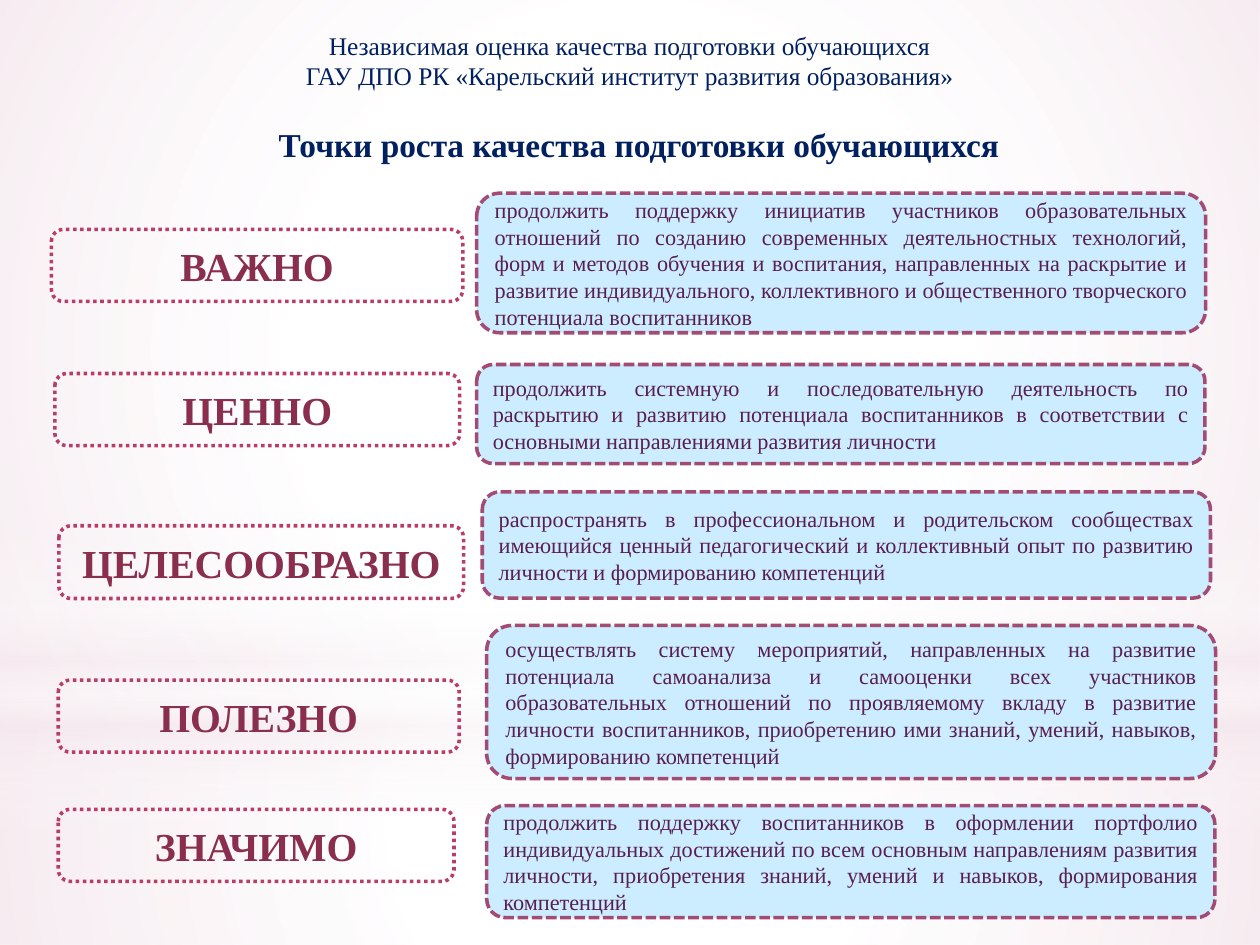
from lxml import etree
from pptx import Presentation
from pptx.dml.color import RGBColor
from pptx.enum.dml import MSO_LINE
from pptx.enum.shapes import MSO_SHAPE
from pptx.enum.text import MSO_ANCHOR, PP_ALIGN
from pptx.oxml.ns import qn
from pptx.util import Pt

ROUNDED, RECTANGLE, OVAL = MSO_SHAPE.ROUNDED_RECTANGLE, MSO_SHAPE.RECTANGLE, MSO_SHAPE.OVAL
CENTER, JUSTIFY = PP_ALIGN.CENTER, PP_ALIGN.JUSTIFY
TOP, MIDDLE = MSO_ANCHOR.TOP, MSO_ANCHOR.MIDDLE
DOTS, DASHES = MSO_LINE.ROUND_DOT, MSO_LINE.DASH
SYSTEM_DASHES = {DOTS: "sysDot", DASHES: "sysDash"}

FONT = "Times New Roman"
COLORS = {
    "white": "FFFFFF", "blush": "F4E7ED", "navy": "002060",
    "label_line": "B83D68", "label_text": "8A2E4E",
    "card_fill": "CCECFF", "card_line": "A34B73", "card_text": "591F4D",
}
WIDTH, HEIGHT = 793.75, 595.25

# geometry, top, height, radial, stops of (position, color, opacity) in percent
BACKDROP = [
    (RECTANGLE, 442.8, 152.45, True, [(0, "white", 91), (37, "white", 76), (100, "blush", 79)]),
    (RECTANGLE, 0, 442.8, True, [(0, "white", 89), (48, "white", 62), (100, "blush", 79)]),
    (RECTANGLE, 326.9, 198.7, False, [(0, "white", 0), (29, "white", 30), (45, "blush", 40),
                                      (55, "white", 26), (65, "blush", 60), (100, "white", 0)]),
    (OVAL, 139, 442.8, True, [(0, "white", 100), (56, "white", 0)]),
]

# box, insets (left, top, right, bottom), size, bold, lines
HEADINGS = [
    ((39.6, 14.4, 714.2, 48.2), (8, 4.3, 8, 4.3), 16, False,
     ["Независимая оценка качества подготовки обучающихся",
      "ГАУ ДПО РК «Карельский институт развития образования»"]),
    ((45.4, 76, 714.2, 31), (8, 2.3, 8, 4.3), 21, True,
     ["Точки роста качества подготовки обучающихся"]),
]

# label, label box, card text, card box
GROWTH_POINTS = [
    ("ВАЖНО", (32.4, 144.5, 259.2, 45.4),
     "продолжить поддержку инициатив участников образовательных отношений по созданию "
     "современных деятельностных технологий, форм и методов обучения и воспитания, "
     "направленных на раскрытие и развитие индивидуального, коллективного и общественного "
     "творческого потенциала воспитанников", (300.3, 121.7, 459.2, 87.9)),
    ("ЦЕННО", (34.6, 235.3, 255, 45.4),
     "продолжить системную и последовательную деятельность по раскрытию и развитию "
     "потенциала воспитанников в соответствии с основными направлениями развития личности",
     (300.3, 229.6, 458.8, 62.4)),
    ("ЦЕЛЕСООБРАЗНО", (37.1, 331.2, 255, 45.8),
     "распространять в профессиональном и родительском сообществах имеющийся ценный "
     "педагогический и коллективный опыт по развитию личности и формированию компетенций",
     (303.8, 309.8, 458.8, 67)),
    ("ПОЛЕЗНО", (36.7, 428.4, 252.6, 45.4),
     "осуществлять систему мероприятий, направленных на развитие потенциала самоанализа и "
     "самооценки всех участников образовательных отношений по проявляемому вкладу в развитие "
     "личности воспитанников, приобретению ими знаний, умений, навыков, формированию "
     "компетенций", (306.6, 394, 459.2, 96.4)),
    ("ЗНАЧИМО", (36.7, 509.8, 249.3, 45.4),
     "продолжить поддержку воспитанников в оформлении портфолио индивидуальных достижений "
     "по всем основным направлениям развития личности, приобретения знаний, умений и "
     "навыков, формирования компетенций", (306.6, 507.4, 458.8, 70.6)),
]


def rgb(name):
    return RGBColor.from_string(COLORS[name])


def fill_with_gradient(shape, radial, stops):
    """Give the shape a gradient whose stops carry their own opacity."""
    shape.fill.background()
    properties = shape.fill._xPr
    gradient = etree.Element(qn("a:gradFill"), rotWithShape="1")
    stop_list = etree.SubElement(gradient, qn("a:gsLst"))
    for position, color, opacity in stops:
        stop = etree.SubElement(stop_list, qn("a:gs"), pos=str(position * 1000))
        color_element = etree.SubElement(stop, qn("a:srgbClr"), val=COLORS[color])
        etree.SubElement(color_element, qn("a:alpha"), val=str(opacity * 1000))
    if radial:
        circle = etree.SubElement(gradient, qn("a:path"), path="circle")
        etree.SubElement(circle, qn("a:fillToRect"), l="50000", t="50000", r="50000", b="50000")
    else:
        etree.SubElement(gradient, qn("a:lin"), ang="5400000", scaled="0")
    properties.replace(properties.find(qn("a:noFill")), gradient)


def write_text(shape, lines, size, color, bold, alignment, anchor):
    frame = shape.text_frame
    frame.word_wrap = True
    frame.vertical_anchor = anchor
    paragraph = frame.paragraphs[0]
    paragraph.alignment = alignment
    for index, line in enumerate(lines):
        if index:
            paragraph.add_line_break()
        run = paragraph.add_run()
        run.text = line
        run.font.name, run.font.size, run.font.bold = FONT, Pt(size), bold
        run.font.color.rgb = rgb(color)


def add_plain_shape(slide, geometry, box):
    shape = slide.shapes.add_shape(geometry, *map(Pt, box))
    shape.shadow.inherit = False
    shape.fill.background()
    shape.line.fill.background()
    return shape


def add_outlined_box(slide, box, line_color, dash):
    shape = add_plain_shape(slide, ROUNDED, box)
    shape.line.color.rgb = rgb(line_color)
    shape.line.width = Pt(2.25)
    shape.line.dash_style = dash
    shape.line._ln.find(qn("a:prstDash")).set("val", SYSTEM_DASHES[dash])
    return shape


def main():
    presentation = Presentation()
    presentation.slide_width, presentation.slide_height = Pt(WIDTH), Pt(HEIGHT)
    slide = presentation.slides.add_slide(presentation.slide_layouts[6])
    slide.background.fill.solid()
    slide.background.fill.fore_color.rgb = rgb("white")

    for geometry, top, height, radial, stops in BACKDROP:
        glow = add_plain_shape(slide, geometry, (0, top, WIDTH, height))
        fill_with_gradient(glow, radial, stops)

    for box, insets, size, bold, lines in HEADINGS:
        heading = slide.shapes.add_textbox(*map(Pt, box))
        frame = heading.text_frame
        (frame.margin_left, frame.margin_top,
         frame.margin_right, frame.margin_bottom) = map(Pt, insets)
        write_text(heading, lines, size, "navy", bold, CENTER, TOP)

    for label_text, label_box, card_text, card_box in GROWTH_POINTS:
        label = add_outlined_box(slide, label_box, "label_line", DOTS)
        write_text(label, [label_text], 25, "label_text", True, CENTER, MIDDLE)
        card = add_outlined_box(slide, card_box, "card_line", DASHES)
        card.fill.solid()
        card.fill.fore_color.rgb = rgb("card_fill")
        write_text(card, [card_text], 14, "card_text", False, JUSTIFY, MIDDLE)

    presentation.save("out.pptx")


if __name__ == "__main__":
    main()
